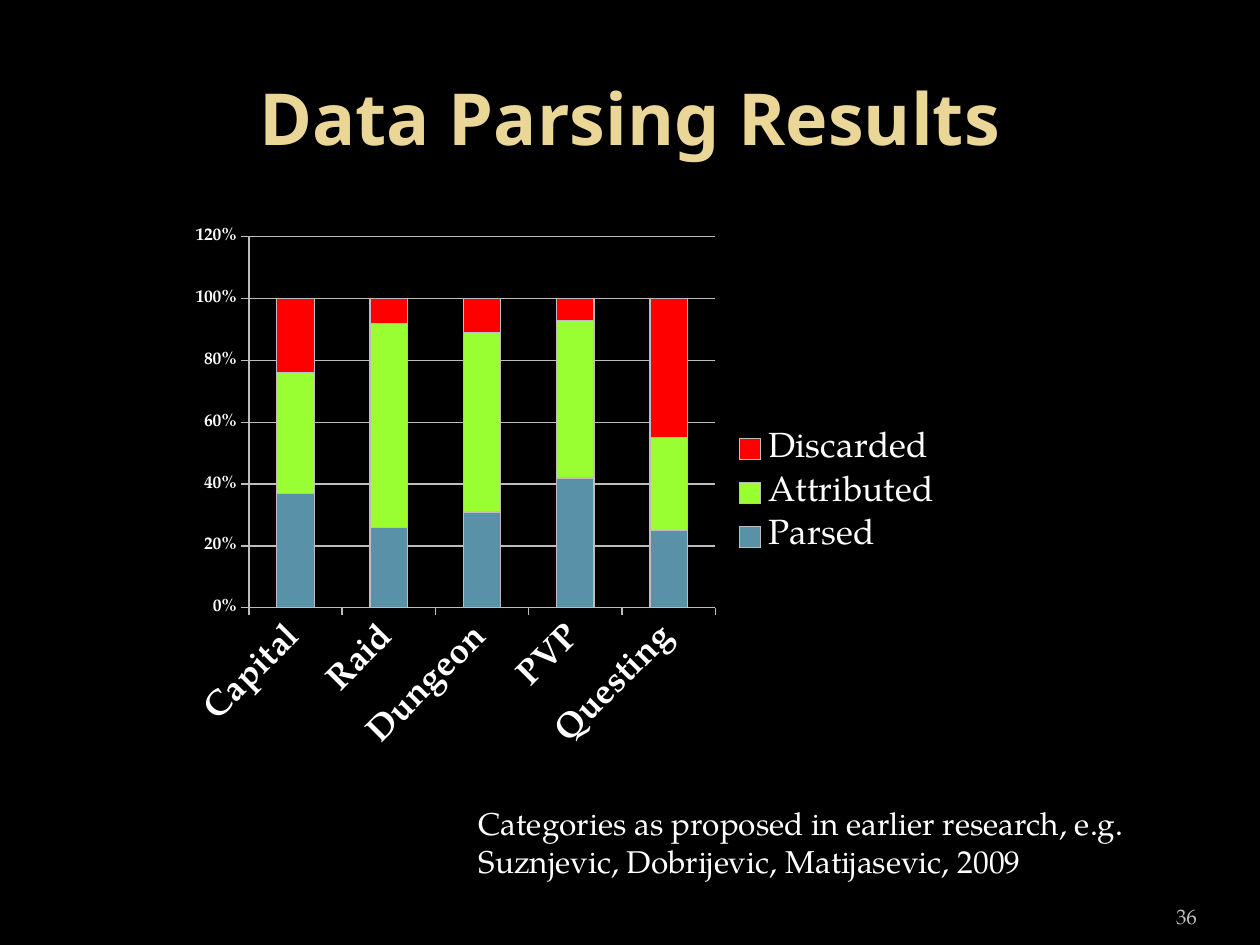
from dataclasses import dataclass

from lxml import etree
from pptx import Presentation
from pptx.chart.data import CategoryChartData
from pptx.dml.color import RGBColor
from pptx.enum.chart import XL_CHART_TYPE as ChartType
from pptx.enum.chart import XL_LEGEND_POSITION as LegendPosition
from pptx.enum.chart import XL_TICK_MARK as TickMark
from pptx.enum.text import MSO_ANCHOR as Anchor
from pptx.enum.text import PP_ALIGN as Align
from pptx.oxml.ns import qn
from pptx.util import Inches, Pt


@dataclass(frozen=True)
class Theme:
    background: str = "000000"
    text: str = "FFFFFF"
    title: str = "EAD696"
    muted: str = "BDBDBD"
    parsed: str = "5992A8"
    attributed: str = "99FF33"
    discarded: str = "FF0000"
    title_font: str = "Noto Sans"
    body_font: str = "TeX Gyre Pagella"
    title_size: int = 41
    label_size: int = 20
    body_size: int = 18
    number_size: int = 12
    axis_size: int = 10


def format_font(font, name, size, color, bold=False):
    font.name = name
    font.size = Pt(size)
    font.bold = bold
    font.color.rgb = RGBColor.from_string(color)


def write_text(frame, text, align=Align.LEFT, anchor=Anchor.TOP, **font_format):
    frame.word_wrap = True
    frame.vertical_anchor = anchor
    paragraph = frame.paragraphs[0]
    paragraph.alignment = align
    run = paragraph.add_run()
    run.text = text
    format_font(run.font, **font_format)


class SlideBuilder:
    def __init__(self, presentation, theme):
        self.theme = theme
        self.slide = presentation.slides.add_slide(presentation.slide_layouts[5])
        fill = self.slide.background.fill
        fill.solid()
        fill.fore_color.rgb = RGBColor.from_string(theme.background)

    def title(self, text, left, top, width, height):
        shape = self.slide.shapes.title
        shape.left, shape.top = Inches(left), Inches(top)
        shape.width, shape.height = Inches(width), Inches(height)
        write_text(shape.text_frame, text, align=Align.CENTER, anchor=Anchor.MIDDLE,
                   name=self.theme.title_font, size=self.theme.title_size,
                   color=self.theme.title, bold=True)

    def text(self, text, left, top, width, height, side_inset=0.1, **text_format):
        shape = self.slide.shapes.add_textbox(
            Inches(left), Inches(top), Inches(width), Inches(height))
        frame = shape.text_frame
        frame.margin_left = frame.margin_right = Inches(side_inset)
        write_text(frame, text, name=self.theme.body_font, **text_format)

    def stacked_chart(self, categories, series_rows, plot_layout, left, top, width, height):
        theme = self.theme
        data = CategoryChartData(number_format="0%")
        data.categories = categories
        for name, values, color in series_rows:
            data.add_series(name, values)
        chart = self.slide.shapes.add_chart(
            ChartType.COLUMN_STACKED, Inches(left), Inches(top),
            Inches(width), Inches(height), data).chart
        chart.has_title = False
        format_font(chart.font, theme.body_font, theme.axis_size, theme.text)

        plot = chart.plots[0]
        plot.gap_width = 150
        plot.overlap = 100
        plot.vary_by_categories = False
        for series, (name, values, color) in zip(plot.series, series_rows):
            series.format.fill.solid()
            series.format.fill.fore_color.rgb = RGBColor.from_string(color)
            self.line(series.format.line)

        for axis, size in ((chart.category_axis, theme.label_size),
                           (chart.value_axis, theme.axis_size)):
            axis.major_tick_mark = TickMark.OUTSIDE
            axis.minor_tick_mark = TickMark.NONE
            self.line(axis.format.line)
            format_font(axis.tick_labels.font, theme.body_font, size, theme.text, bold=True)
        labels = chart.category_axis._element.find(qn("c:txPr"))
        labels.find(qn("a:bodyPr")).set("rot", "-2700000")

        value_axis = chart.value_axis
        value_axis.minimum_scale, value_axis.maximum_scale = 0, 1.2
        value_axis.major_unit = 0.2
        value_axis.tick_labels.number_format = "0%"
        value_axis.tick_labels.number_format_is_linked = False
        value_axis.has_major_gridlines = True
        self.line(value_axis.major_gridlines.format.line)

        chart.has_legend = True
        chart.legend.position = LegendPosition.RIGHT
        chart.legend.include_in_layout = False
        format_font(chart.legend.font, theme.body_font, theme.label_size, theme.text)
        self.place_plot(chart, plot_layout)

    def line(self, line):
        line.width = Pt(0.75)
        line.color.rgb = RGBColor.from_string(self.theme.muted)

    def place_plot(self, chart, plot_layout):
        plot_area = chart._chartSpace.chart.plotArea
        for old_layout in plot_area.findall(qn("c:layout")):
            plot_area.remove(old_layout)
        layout = etree.Element(qn("c:layout"))
        plot_area.insert(0, layout)
        manual = etree.SubElement(layout, qn("c:manualLayout"))
        settings = {"layoutTarget": "inner", "xMode": "edge", "yMode": "edge"}
        settings.update(zip("xywh", plot_layout))
        for tag, value in settings.items():
            etree.SubElement(manual, qn(f"c:{tag}")).set("val", str(value))


def main():
    presentation = Presentation()
    presentation.slide_width, presentation.slide_height = Inches(10), Inches(7.5)
    theme = Theme()
    builder = SlideBuilder(presentation, theme)
    builder.title("Data Parsing Results", 0.5, 0.3, 9, 1.25)
    builder.text("36", 8.67, 7.02, 0.83, 0.4, side_inset=0, align=Align.RIGHT,
                 anchor=Anchor.BOTTOM, size=theme.number_size, color=theme.muted)
    builder.stacked_chart(
        ["Capital", "Raid", "Dungeon", "PVP", "Questing"],
        [("Parsed", [0.37, 0.26, 0.31, 0.42, 0.25], theme.parsed),
         ("Attributed", [0.39, 0.66, 0.58, 0.51, 0.3], theme.attributed),
         ("Discarded", [0.24, 0.08, 0.11, 0.07, 0.45], theme.discarded)],
        (0.09, 0.03, 0.6, 0.68), 1.42, 1.75, 6.17, 4.33)
    builder.text("Categories as proposed in earlier research, e.g. "
                 "Suznjevic, Dobrijevic, Matijasevic, 2009",
                 3.7, 6.33, 5.92, 0.7, size=theme.body_size, color=theme.text)
    presentation.save("out.pptx")


if __name__ == "__main__":
    main()
